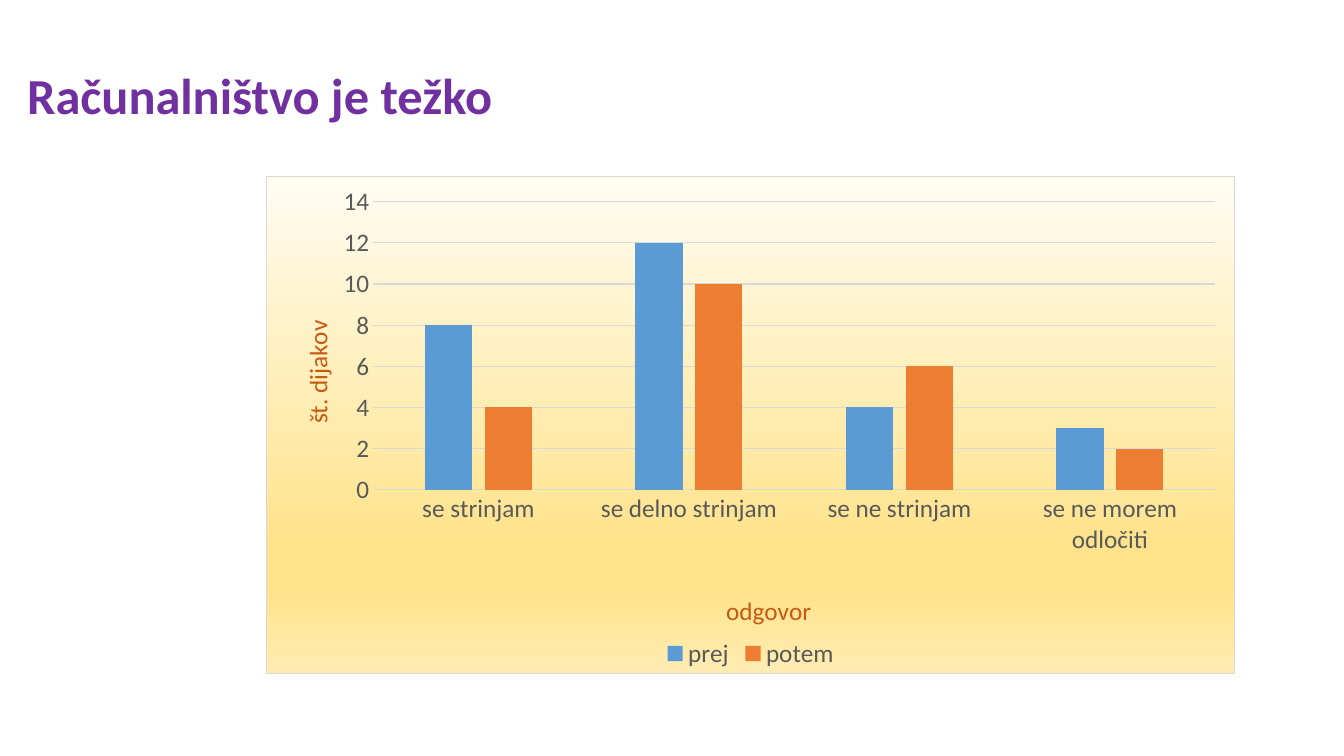
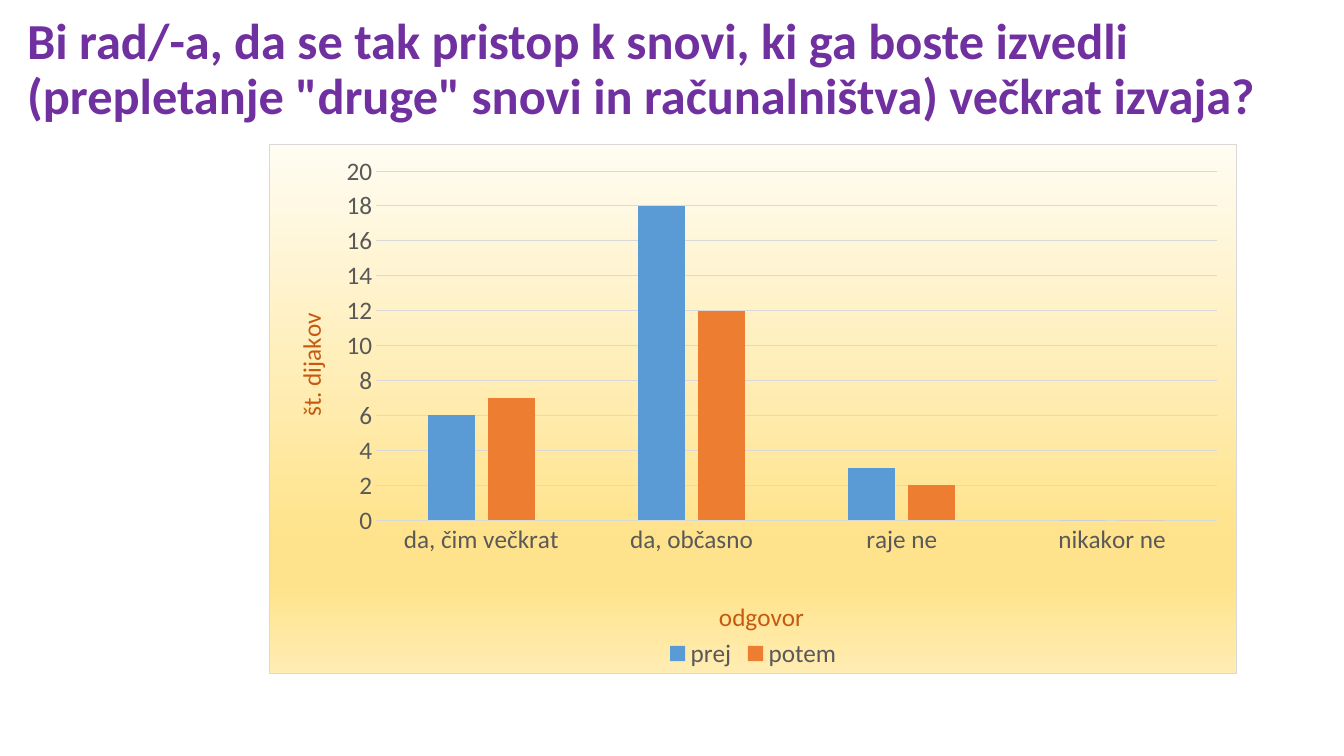
import pptx
import pptx.chart.data
import pptx.dml.color
import pptx.enum.chart
import pptx.enum.text
import pptx.oxml
import pptx.oxml.ns
import pptx.util
import lxml.etree

RGB = pptx.dml.color.RGBColor
PURPLE = RGB(0x70, 0x30, 0xA0)
RUST = RGB(0xC5, 0x5A, 0x11)
GREY = RGB(0x59, 0x59, 0x59)
PALE_GREY = RGB(0xD9, 0xD9, 0xD9)
BLUE = RGB(0x5B, 0x9B, 0xD5)
ORANGE = RGB(0xED, 0x7D, 0x31)
CREAM = RGB(0xFF, 0xFC, 0xF2)
GOLD = RGB(0xFF, 0xE3, 0x8C)
SAND = RGB(0xFF, 0xEC, 0xB2)
GRADIENT = [(0, CREAM), (74, GOLD), (83, GOLD), (100, SAND)]

FONT = "Calibri"
CHART_SIZE = 18
HAIRLINE = pptx.util.Pt(0.75)
TITLE_BOX = (0.17, 0.17, 12.99, 1.12)

# box: inches; plot_height and title positions: shares of the chart box
SURVEYS = [
    dict(
        title="Računalništvo je težko",
        box=(2.64, 1.75, 9.61, 4.94),
        categories=["se strinjam", "se delno strinjam", "se ne strinjam",
                    "se ne morem odločiti"],
        before=[8, 12, 4, 3], after=[4, 10, 6, 2], top_value=14,
        plot_height=0.58, category_title=(0.47, 0.83), value_title=(0.03, 0.28),
    ),
    dict(
        title='Bi rad/-a, da se tak pristop k snovi, ki ga boste izvedli '
              '(prepletanje "druge" snovi in računalništva) večkrat izvaja?',
        box=(2.67, 1.43, 9.6, 5.26),
        categories=["da, čim večkrat", "da, občasno", "raje ne", "nikakor ne"],
        before=[6, 18, 3, 0], after=[7, 12, 2, 0], top_value=20,
        plot_height=0.66, category_title=(0.46, 0.85), value_title=(0.02, 0.31),
    ),
]


def inches(box):
    return [pptx.util.Inches(v) for v in box]


def style_font(font, size=CHART_SIZE, color=GREY, bold=False):
    font.name, font.size, font.bold = FONT, pptx.util.Pt(size), bold
    font.color.rgb = color


def write(tf, text, line_spacing=None, align=None, **style):
    p = tf.paragraphs[0]
    p.line_spacing, p.alignment = line_spacing, align
    r = p.add_run()
    r.text = text
    style_font(r.font, **style)


def style_line(line):
    line.color.rgb, line.width = PALE_GREY, HAIRLINE


def set_layout(parent, index, x, y, w=None, h=None):
    """Fix a chart part at shares of the chart; a plot area also gets a size."""
    for old in parent.findall(pptx.oxml.ns.qn("c:layout")):
        parent.remove(old)
    layout = pptx.oxml.parse_xml(
        f'<c:layout {pptx.oxml.ns.nsdecls("c")}><c:manualLayout/></c:layout>')
    items = [("xMode", "edge"), ("yMode", "edge"), ("x", x), ("y", y)]
    if w is not None:
        items = [("layoutTarget", "inner")] + items + [("w", w), ("h", h)]
    for tag, value in items:
        lxml.etree.SubElement(layout[0], pptx.oxml.ns.qn(f"c:{tag}"), val=str(value))
    parent.insert(index, layout)


def fill_chart_area(chart):
    stops = "".join(
        f'<a:gs pos="{pos * 1000}"><a:srgbClr val="{color}"/></a:gs>'
        for pos, color in GRADIENT)
    sp_pr = pptx.oxml.parse_xml(
        f'<c:spPr {pptx.oxml.ns.nsdecls("c", "a")}>'
        f'<a:gradFill><a:gsLst>{stops}</a:gsLst>'
        f'<a:lin ang="5400000" scaled="0"/></a:gradFill>'
        f'<a:ln w="{int(HAIRLINE)}"><a:solidFill><a:srgbClr val="{PALE_GREY}"/>'
        f'</a:solidFill></a:ln></c:spPr>')
    chart.element.find(pptx.oxml.ns.qn("c:chart")).addnext(sp_pr)


def format_axis(axis, title, position, rotation=0):
    axis.major_tick_mark = axis.minor_tick_mark = pptx.enum.chart.XL_TICK_MARK.NONE
    style_font(axis.tick_labels.font)
    tf = axis.axis_title.text_frame
    write(tf, title, color=RUST)
    body = tf._txBody.bodyPr
    body.set("rot", str(rotation * 60000))
    body.set("vert", "horz")
    set_layout(axis.axis_title._element, 1, *position)


def add_survey_chart(s, survey):
    data = pptx.chart.data.CategoryChartData()
    data.categories = survey["categories"]
    data.add_series("prej", survey["before"])
    data.add_series("potem", survey["after"])
    chart = s.shapes.add_chart(
        pptx.enum.chart.XL_CHART_TYPE.COLUMN_CLUSTERED,
        *inches(survey["box"]), data).chart
    chart.has_title = False
    style_font(chart.font)
    fill_chart_area(chart)

    plot = chart.plots[0]
    plot.gap_width, plot.overlap, plot.vary_by_categories = 219, -27, False
    for series, color in zip(plot.series, (BLUE, ORANGE)):
        series.format.fill.solid()
        series.format.fill.fore_color.rgb = color

    format_axis(chart.category_axis, "odgovor", survey["category_title"])
    style_line(chart.category_axis.format.line)
    values = chart.value_axis
    format_axis(values, "št. dijakov", survey["value_title"], rotation=-90)
    values.minimum_scale, values.maximum_scale = 0, survey["top_value"]
    values.major_unit = 2
    values.format.line.fill.background()
    style_line(values.major_gridlines.format.line)

    chart.has_legend = True
    chart.legend.position = pptx.enum.chart.XL_LEGEND_POSITION.BOTTOM
    chart.legend.include_in_layout = False
    style_font(chart.legend.font)
    plot_area = chart.element.find(".//" + pptx.oxml.ns.qn("c:plotArea"))
    set_layout(plot_area, 0, 0.11, 0.05, 0.87, survey["plot_height"])


def format_title_layout(layout):
    sp = layout.placeholders[0]
    sp.left, sp.top, sp.width, sp.height = inches(TITLE_BOX)
    tf = sp.text_frame
    tf.vertical_anchor = pptx.enum.text.MSO_ANCHOR.BOTTOM
    tf.auto_size = pptx.enum.text.MSO_AUTO_SIZE.NONE
    tf.word_wrap = True


def add_survey_slide(prs, layout, survey):
    s = prs.slides.add_slide(layout)
    write(s.shapes.title.text_frame, survey["title"], line_spacing=0.9,
          align=pptx.enum.text.PP_ALIGN.LEFT, size=36, color=PURPLE, bold=True)
    add_survey_chart(s, survey)


def main():
    prs = pptx.Presentation()
    prs.slide_width, prs.slide_height = inches((13.33, 7.5))
    layout = prs.slide_layouts.get_by_name("Title Only")
    format_title_layout(layout)
    for survey in SURVEYS:
        add_survey_slide(prs, layout, survey)
    prs.save("out.pptx")


if __name__ == "__main__":
    main()
